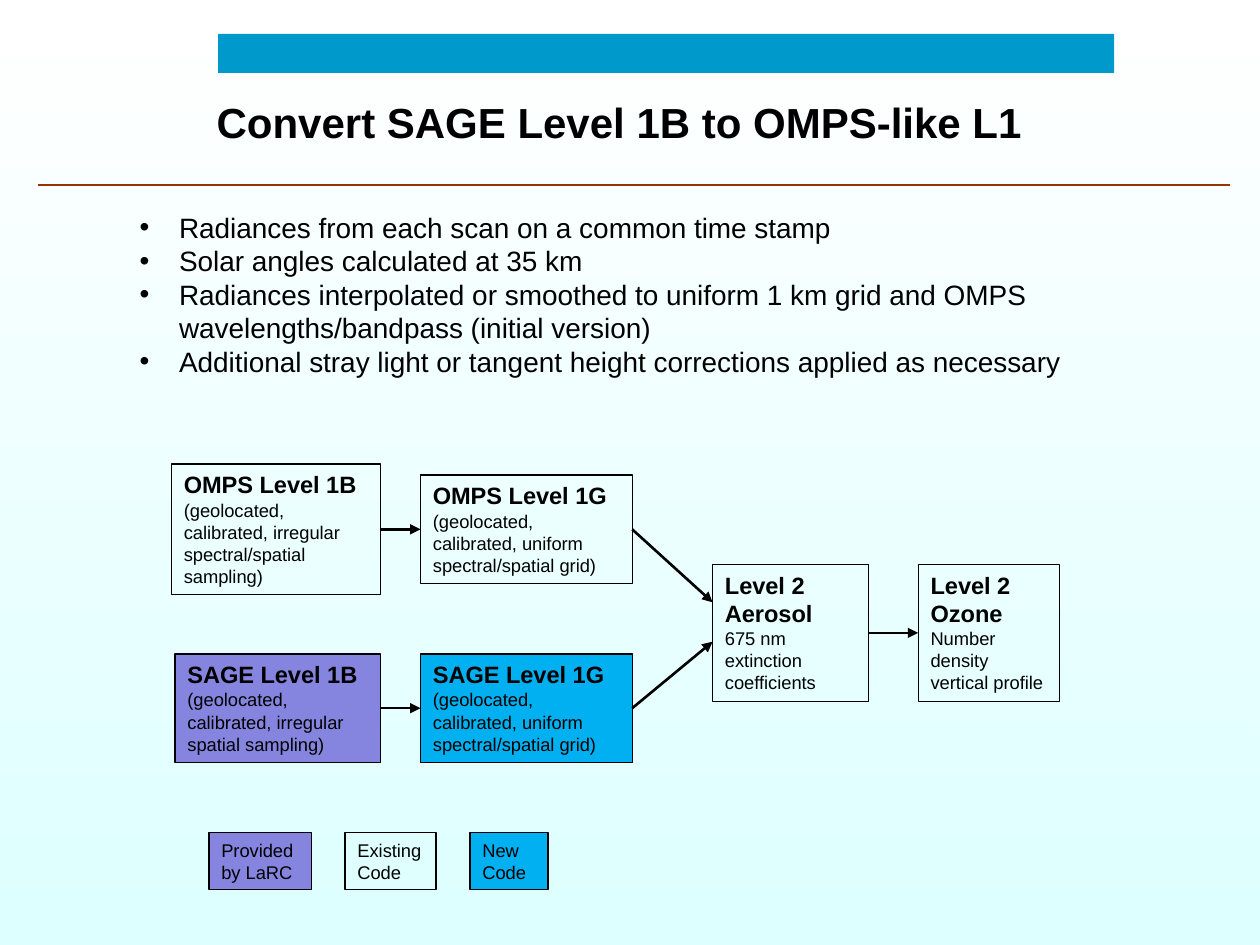
from lxml import etree
from pptx import Presentation
from pptx import util as u
from pptx.dml import color
from pptx.enum import shapes, text
from pptx.oxml import ns

Pt = u.Pt
FONT = "Arial"
COLORS = {
    "ink": "000000",
    "rule": "993300",
    "band": "0099CC",
    "provided": "8585E0",
    "new": "00B0F0",
    "sky_top": "FFFFFF",
    "sky_bottom": "DDFFFF",
}


def rgb(name):
    return color.RGBColor.from_string(COLORS[name])


def add_text(frame, words, size, bold=False, first=False, bullet_indent=0):
    """Add one paragraph of formatted text to a text frame."""
    frame.word_wrap = True
    frame.vertical_anchor = text.MSO_ANCHOR.TOP
    paragraph = frame.paragraphs[0] if first else frame.add_paragraph()
    paragraph.alignment = text.PP_ALIGN.LEFT
    paragraph.line_spacing = Pt(round(size * 1.2, 1))
    if bullet_indent:
        props = paragraph._p.get_or_add_pPr()
        props.set("marL", str(Pt(bullet_indent)))
        props.set("indent", str(-Pt(bullet_indent)))
        etree.SubElement(props, ns.qn("a:buFont"), typeface=FONT)
        etree.SubElement(props, ns.qn("a:buChar"), char="•")
    run = paragraph.add_run()
    run.text = words
    run.font.name = FONT
    run.font.size = Pt(size)
    run.font.bold = bold
    run.font.color.rgb = rgb("ink")


def add_box(slide, left, top, width, height, fill=None, outlined=True):
    box = slide.shapes.add_shape(
        shapes.MSO_SHAPE.RECTANGLE, Pt(left), Pt(top), Pt(width), Pt(height))
    box.shadow.inherit = False
    if fill:
        box.fill.solid()
        box.fill.fore_color.rgb = rgb(fill)
    else:
        box.fill.background()
    if outlined:
        box.line.color.rgb = rgb("ink")
        box.line.width = Pt(0.75)
    else:
        box.line.fill.background()
    return box


def add_line(slide, start, end, line_color="ink", arrow=False):
    line = slide.shapes.add_connector(
        shapes.MSO_CONNECTOR.STRAIGHT, *(Pt(value) for value in start + end))
    line.line.color.rgb = rgb(line_color)
    line.line.width = Pt(1.5)
    if arrow:
        etree.SubElement(line.line._get_or_add_ln(), ns.qn("a:tailEnd"), type="triangle")
    etree.SubElement(line._element.spPr, ns.qn("a:effectLst"))
    return line


def add_background(slide):
    fill = slide.background.fill
    fill.gradient()
    fill.gradient_angle = 270
    for stop, position, name in zip(fill.gradient_stops, (0, 1), ("sky_top", "sky_bottom")):
        stop.position = position
        stop.color.rgb = rgb(name)


def add_header(slide, left, top, width):
    # Colour band, title and rule
    add_box(slide, left + 103, top, 512, 22.3, "band", outlined=False)
    title = slide.shapes.add_textbox(Pt(left + 95), Pt(top + 32.5), Pt(502), Pt(36))
    add_text(title.text_frame, "Convert SAGE Level 1B to OMPS-like L1", 24, bold=True, first=True)
    add_line(slide, (left, top + 86.4), (left + width, top + 86.4), "rule")


def add_bullets(slide, left, top, width, height):
    points = (
        "Radiances from each scan on a common time stamp",
        "Solar angles calculated at 35 km",
        "Radiances interpolated or smoothed to uniform 1 km grid and OMPS "
        "wavelengths/bandpass (initial version)",
        "Additional stray light or tangent height corrections applied as necessary",
    )
    body = slide.shapes.add_textbox(Pt(left), Pt(top), Pt(width), Pt(height))
    for index, point in enumerate(points):
        add_text(body.text_frame, point, 16, first=index == 0, bullet_indent=22.5)


def add_flow(slide, left, top):
    # Stages: heading, detail, x, y, width, height, fill
    uniform = "(geolocated, calibrated, uniform spectral/spatial grid)"
    stages = (
        ("OMPS Level 1B", "(geolocated, calibrated, irregular spectral/spatial sampling)",
         0, 0, 119.5, 74.6, None),
        ("OMPS Level 1G", uniform, 142.3, 6.3, 121, 62, None),
        ("SAGE Level 1B", "(geolocated, calibrated, irregular spatial sampling)",
         2, 108.5, 117.5, 62, "provided"),
        ("SAGE Level 1G", uniform, 142.3, 108.5, 121, 62, "new"),
        ("Level 2 Aerosol", "675 nm extinction coefficients", 309.2, 57.3, 89, 78.3, None),
        ("Level 2 Ozone", "Number density vertical profile", 426.7, 57.3, 80.6, 78.3, None),
    )
    boxes = {}
    for heading, detail, x, y, width, height, fill in stages:
        box = add_box(slide, left + x, top + y, width, height, fill)
        add_text(box.text_frame, heading, 13.5, bold=True, first=True)
        add_text(box.text_frame, detail, 10.5)
        boxes[heading] = box

    # Straight steps between neighbouring stages
    for source, target in (("OMPS Level 1B", "OMPS Level 1G"),
                           ("SAGE Level 1B", "SAGE Level 1G"),
                           ("Level 2 Aerosol", "Level 2 Ozone")):
        step = add_line(slide, (0, 0), (0, 0), arrow=True)
        step.begin_connect(boxes[source], 3)
        step.end_connect(boxes[target], 1)

    # Both Level 1G branches meet on the left side of Aerosol
    for source, entry in (("OMPS Level 1G", 79), ("SAGE Level 1G", 101.5)):
        branch = add_line(slide, (left, top), (left + 309.2, top + entry), arrow=True)
        branch.begin_connect(boxes[source], 3)


def add_legend(slide, left, top):
    for label, x, width, fill in (("Provided by LaRC", 0, 58.5, "provided"),
                                  ("Existing Code", 77.8, 52, None),
                                  ("New Code", 149.2, 44.6, "new")):
        key = add_box(slide, left + x, top, width, 32.6, fill)
        add_text(key.text_frame, label, 10.5, first=True)


def main():
    deck = Presentation()
    deck.slide_width, deck.slide_height = Pt(720), Pt(540)
    slide = deck.slides.add_slide(deck.slide_layouts[6])
    add_background(slide)
    add_header(slide, left=21.7, top=19.3, width=681)
    add_bullets(slide, left=72.7, top=116.5, width=577, height=103)
    add_flow(slide, left=98, top=265.2)
    add_legend(slide, left=119.4, top=475.7)
    deck.save("out.pptx")


if __name__ == "__main__":
    main()
